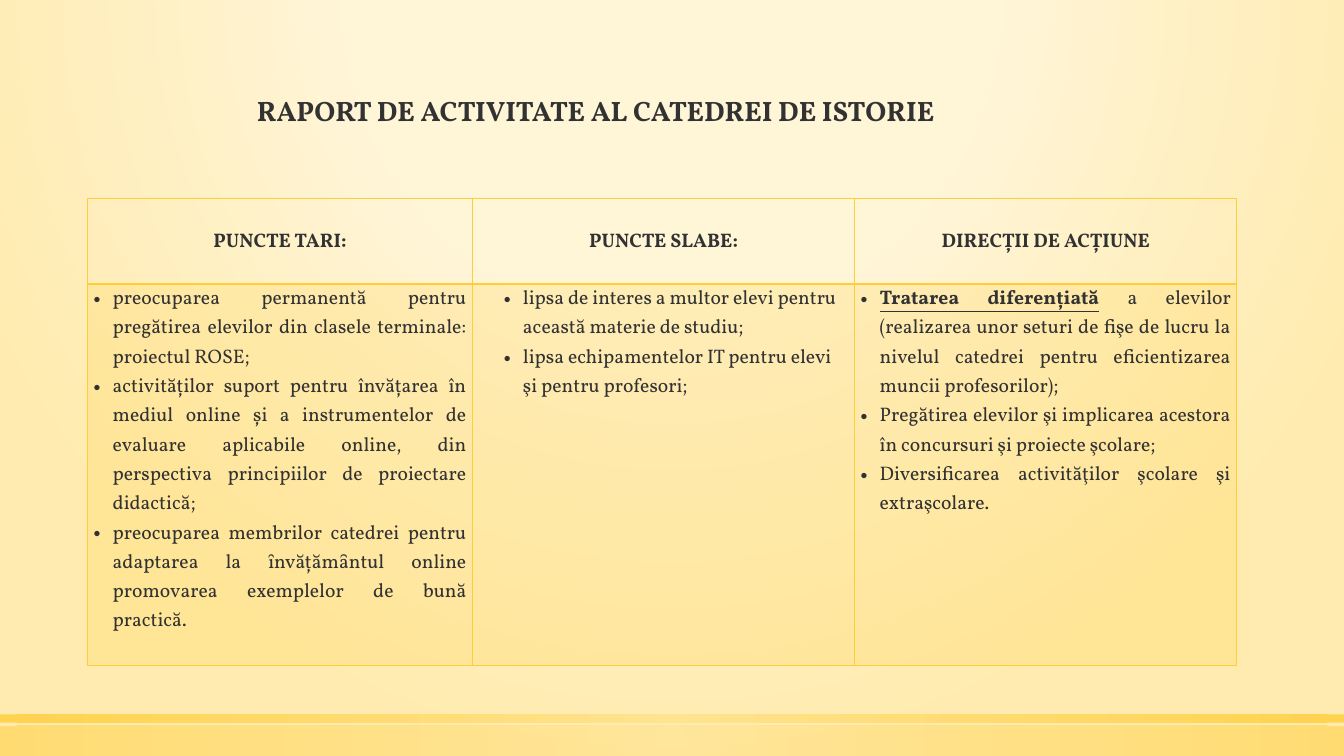
from lxml.etree import SubElement
from pptx import Presentation
from pptx.dml.color import RGBColor
from pptx.enum.shapes import MSO_SHAPE as Preset
from pptx.enum.text import MSO_ANCHOR as Anchor, MSO_AUTO_SIZE as AutoSize, PP_ALIGN as Align
from pptx.oxml.ns import qn
from pptx.util import Cm, Pt

INK, GOLD, PALE_GOLD = "323232", "FFCD36", "FFE186"
HEADINGS = ["PUNCTE TARI:", "PUNCTE SLABE:", "DIRECȚII DE ACȚIUNE"]
# Per column: alignment, left margin in cm, items as (underlined lead, text)
COLUMNS = [
    (Align.JUSTIFY, 0.48, [
        ("", "preocuparea permanentă pentru pregătirea elevilor din clasele terminale: proiectul ROSE;"),
        ("", "activităților suport pentru învățarea în mediul online și a instrumentelor de evaluare "
             "aplicabile online, din perspectiva principiilor de proiectare didactică;"),
        ("", "preocuparea membrilor catedrei pentru adaptarea la ȋnvățămȃntul online promovarea "
             "exemplelor de bună practică."),
    ]),
    (Align.LEFT, 1.12, [
        ("", "lipsa de interes a multor elevi pentru această materie de studiu;"),
        ("", "lipsa echipamentelor IT pentru elevi şi pentru profesori;"),
    ]),
    (Align.JUSTIFY, 0.48, [
        ("Tratarea diferențiată", " a elevilor (realizarea unor seturi de fişe de lucru la nivelul "
                                  "catedrei pentru eficientizarea muncii profesorilor);"),
        ("", "Pregătirea elevilor şi implicarea acestora în concursuri şi proiecte şcolare;"),
        ("", "Diversificarea activităţilor şcolare şi extraşcolare."),
    ]),
]


def set_radial_fill(fill, element, stops, top, bottom):
    """Fill with a circular gradient; stops are (position, colour, opacity) in percent."""
    fill.solid()
    solid = next(element.iter(qn("a:solidFill")))
    gradient = solid.makeelement(qn("a:gradFill"), {"rotWithShape": "1"})
    stop_list = SubElement(gradient, qn("a:gsLst"))
    for position, color, opacity in stops:
        stop = SubElement(stop_list, qn("a:gs"), pos=str(position * 1000))
        color_node = SubElement(stop, qn("a:srgbClr"), val=color)
        SubElement(color_node, qn("a:alpha"), val=str(opacity * 1000))
    circle = SubElement(gradient, qn("a:path"), {"path": "circle"})
    SubElement(circle, qn("a:fillToRect"), l="50000", t=str(top * 1000),
               r="50000", b=str(bottom * 1000))
    solid.getparent().replace(solid, gradient)


def add_run(paragraph, text, size, bold=False, underline=False):
    run = paragraph.add_run()
    run.text = text
    font = run.font
    font.name, font.size = "Vollkorn", Pt(size)
    font.bold, font.underline = bold, underline
    font.color.rgb = RGBColor.from_string(INK)


presentation = Presentation()
presentation.slide_width, presentation.slide_height = Cm(33.87), Cm(19.05)
slide = presentation.slides.add_slide(presentation.slide_layouts[5])
set_radial_fill(slide.background.fill, slide.element,
                [(0, "FFF5D7", 59), (40, "FFF5D7", 66), (100, "FFEBAF", 100)], -80, 180)

# Bottom bands
for top, height, opacity in [(18.29, 0.76, 50), (18, 0.21, 80)]:
    band = slide.shapes.add_shape(Preset.RECTANGLE, 0, Cm(top), presentation.slide_width, Cm(height))
    band.shadow.inherit = False
    band.line.fill.background()
    set_radial_fill(band.fill, band.element,
                    [(0, PALE_GOLD, opacity), (100, GOLD, opacity)], 50, 50)

# Title
title = slide.shapes.title
title.left, title.top, title.width, title.height = Cm(6.22), Cm(1.5), Cm(26), Cm(1.83)
title_frame = title.text_frame
title_frame.auto_size = AutoSize.NONE
title_frame.vertical_anchor = Anchor.BOTTOM
heading = title_frame.paragraphs[0]
heading.alignment = Align.LEFT
heading.line_spacing = 0.9
add_run(heading, "RAPORT DE ACTIVITATE AL CATEDREI DE ISTORIE", 20, bold=True)

# Table
table = slide.shapes.add_table(2, 3, Cm(2.21), Cm(5), Cm(28.96), Cm(11.76)).table
table.first_row = table.horz_banding = False
for column, width in zip(table.columns, [9.7, 9.63, 9.63]):
    column.width = Cm(width)
for row, height in zip(table.rows, [2.16, 9.6]):
    row.height = Cm(height)

for row_index, row in enumerate(table.rows):
    thick_side = "lnT" if row_index else "lnB"
    for cell in row.cells:
        cell.margin_left = cell.margin_right = Cm(0.15)
        cell.margin_top = cell.margin_bottom = 0
        properties = cell._tc.get_or_add_tcPr()
        for side in ["lnL", "lnR", "lnT", "lnB"]:
            border = SubElement(properties, qn(f"a:{side}"),
                                w=str(Pt(2 if side == thick_side else 1)))
            SubElement(SubElement(border, qn("a:solidFill")), qn("a:srgbClr"), val=GOLD)
        if row_index:
            cell.fill.solid()
            cell.fill.fore_color.rgb = RGBColor.from_string(GOLD)
            fill_color = properties.find(qn("a:solidFill")).find(qn("a:srgbClr"))
            SubElement(fill_color, qn("a:alpha"), val="20000")
        else:
            cell.fill.background()

for index, (text, (alignment, margin, items)) in enumerate(zip(HEADINGS, COLUMNS)):
    header = table.cell(0, index)
    header.vertical_anchor = Anchor.MIDDLE
    paragraph = header.text_frame.paragraphs[0]
    paragraph.alignment = Align.CENTER
    paragraph.line_spacing = 1.07
    add_run(paragraph, text, 14, bold=True)

    body = table.cell(1, index).text_frame
    for number, (lead, text) in enumerate(items):
        paragraph = body.add_paragraph() if number else body.paragraphs[0]
        paragraph.alignment = alignment
        paragraph.line_spacing = 1.07
        bullet = paragraph._p.get_or_add_pPr()
        bullet.set("marL", str(Cm(margin)))
        bullet.set("indent", str(-Cm(0.48)))
        SubElement(bullet, qn("a:buFont"), typeface="Arial")
        SubElement(bullet, qn("a:buChar"), char="•")
        if lead:
            add_run(paragraph, lead, 14, bold=True, underline=True)
        add_run(paragraph, text, 14)

presentation.save("out.pptx")
